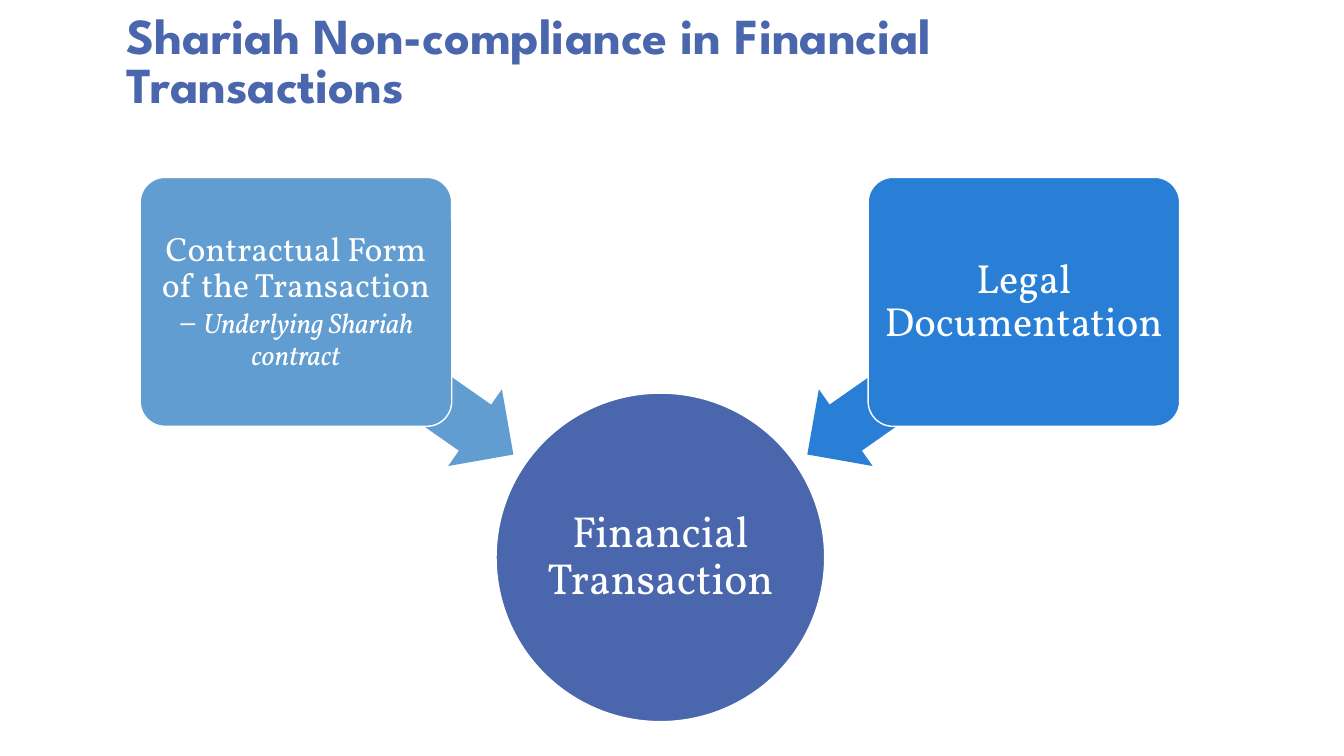
from dataclasses import dataclass

from pptx import Presentation
from pptx.dml.color import RGBColor
from pptx.enum.shapes import MSO_SHAPE
from pptx.enum.text import MSO_ANCHOR, PP_ALIGN
from pptx.shapes.autoshape import Shape
from pptx.slide import Slide
from pptx.text.text import Font
from pptx.util import Inches, Pt

INDIGO = "4A66AC"
WHITE = "FFFFFF"


@dataclass
class Phrase:
    text: str
    size: float
    italic: bool = False


@dataclass
class Node:
    kind: MSO_SHAPE
    left: float
    top: float
    width: float
    height: float
    color: str
    inset: float
    phrases: list[Phrase]


@dataclass
class Arrow:
    left: float
    rotation: float
    color: str


def rgb(color: str) -> RGBColor:
    return RGBColor.from_string(color)


def style_font(font: Font, name: str, size: float, color: str) -> None:
    font.name = name
    font.size = Pt(size)
    font.color.rgb = rgb(color)


def add_filled_shape(slide: Slide, kind: MSO_SHAPE, left: float, top: float,
                     width: float, height: float, color: str) -> Shape:
    shape = slide.shapes.add_shape(kind, Inches(left), Inches(top), Inches(width), Inches(height))
    shape.shadow.inherit = False
    shape.fill.solid()
    shape.fill.fore_color.rgb = rgb(color)
    return shape


def add_arrow(slide: Slide, arrow: Arrow) -> None:
    shape = add_filled_shape(slide, MSO_SHAPE.LEFT_ARROW, arrow.left, 3.29, 2.63, 0.93, arrow.color)
    shape.adjustments[0] = 0.6
    shape.adjustments[1] = 0.5
    shape.rotation = arrow.rotation
    shape.line.fill.background()


def add_node(slide: Slide, node: Node) -> None:
    shape = add_filled_shape(slide, node.kind, node.left, node.top, node.width, node.height, node.color)
    if node.kind == MSO_SHAPE.ROUNDED_RECTANGLE:
        shape.adjustments[0] = 0.1
    shape.line.color.rgb = rgb(WHITE)
    shape.line.width = Pt(1)
    text_frame = shape.text_frame
    text_frame.word_wrap = True
    text_frame.vertical_anchor = MSO_ANCHOR.MIDDLE
    text_frame.margin_left = text_frame.margin_right = Inches(node.inset)
    text_frame.margin_top = text_frame.margin_bottom = Inches(node.inset)
    paragraph = text_frame.paragraphs[0]
    paragraph.alignment = PP_ALIGN.CENTER
    paragraph.line_spacing = 0.9
    for phrase in node.phrases:
        run = paragraph.add_run()
        run.text = phrase.text
        style_font(run.font, "Vollkorn", phrase.size, WHITE)
        run.font.italic = phrase.italic


def add_title(slide: Slide, text: str) -> None:
    box = slide.shapes.add_textbox(Inches(1.16), Inches(0), Inches(9.5), Inches(1.17))
    text_frame = box.text_frame
    text_frame.word_wrap = True
    text_frame.vertical_anchor = MSO_ANCHOR.BOTTOM
    text_frame.text = text
    paragraph = text_frame.paragraphs[0]
    paragraph.line_spacing = 0.8
    font = paragraph.runs[0].font
    style_font(font, "League Spartan", 36, INDIGO)
    font.bold = True


ARROWS = [Arrow(2.7, 215, "629DD1"), Arrow(7.77, 325, "297FD5")]
NODES = [
    Node(MSO_SHAPE.OVAL, 4.92, 3.9, 3.26, 3.26, INDIGO, 0.02,
         [Phrase("Financial Transaction", 31)]),
    Node(MSO_SHAPE.ROUNDED_RECTANGLE, 1.39, 1.76, 3.09, 2.47, "629DD1", 0.05,
         [Phrase("Contractual Form of the Transaction – ", 24),
          Phrase("Underlying Shariah contract", 20, italic=True)]),
    Node(MSO_SHAPE.ROUNDED_RECTANGLE, 8.61, 1.76, 3.09, 2.47, "297FD5", 0.06,
         [Phrase("Legal Documentation", 29)]),
]


def main() -> None:
    presentation = Presentation()
    presentation.slide_width = Inches(13.33)
    presentation.slide_height = Inches(7.5)
    slide = presentation.slides.add_slide(presentation.slide_layouts[6])
    add_title(slide, "Shariah Non-compliance in Financial Transactions")
    for arrow in ARROWS:
        add_arrow(slide, arrow)
    for node in NODES:
        add_node(slide, node)
    presentation.save("out.pptx")


if __name__ == "__main__":
    main()
